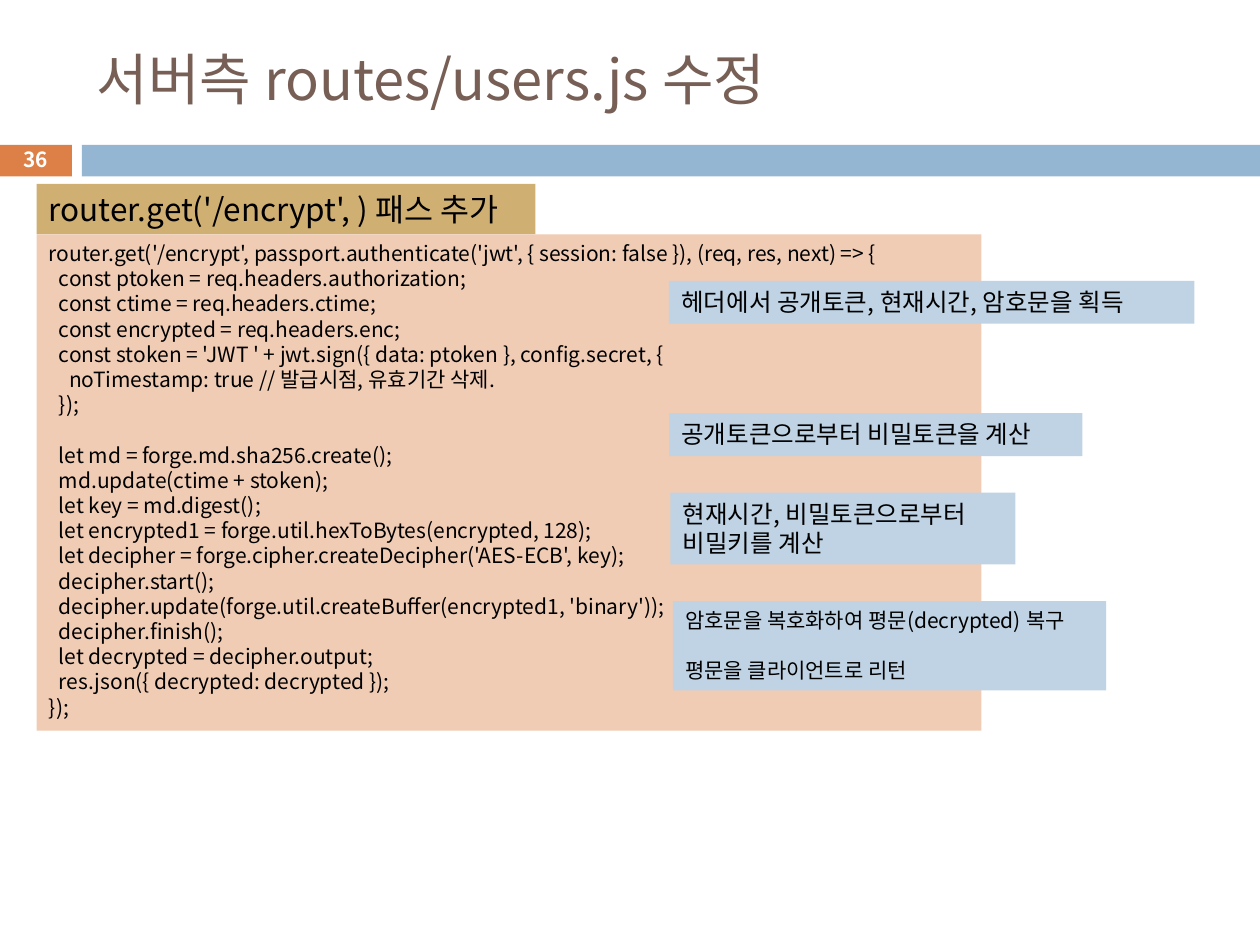
"""Build the slide on the encrypt route in routes/users.js."""
from lxml import etree
from pptx import Presentation
from pptx import util as u
from pptx.dml.color import RGBColor
from pptx.enum import shapes, text
from pptx.oxml.ns import qn

ORANGE = RGBColor(0xDD, 0x80, 0x47)
BLUE = RGBColor(0x94, 0xB6, 0xD2)
PEACH = RGBColor(0xF1, 0xCC, 0xB5)
GOLD = RGBColor(0xD0, 0xAF, 0x72)
PALE = RGBColor(0xBF, 0xD3, 0xE4)
BROWN = RGBColor(0x77, 0x5F, 0x55)
WHITE = RGBColor(0xFF, 0xFF, 0xFF)
BLACK = RGBColor(0, 0, 0)

CODE = """router.get('/encrypt', passport.authenticate('jwt', { session: false }), (req, res, next) => {
  const ptoken = req.headers.authorization;
  const ctime = req.headers.ctime;
  const encrypted = req.headers.enc;
  const stoken = 'JWT ' + jwt.sign({ data: ptoken }, config.secret, {
    noTimestamp: true // 발급시점, 유효기간 삭제.
  });

  let md = forge.md.sha256.create();
  md.update(ctime + stoken);
  let key = md.digest();
  let encrypted1 = forge.util.hexToBytes(encrypted, 128);
  let decipher = forge.cipher.createDecipher('AES-ECB', key);
  decipher.start();
  decipher.update(forge.util.createBuffer(encrypted1, 'binary'));
  decipher.finish();
  let decrypted = decipher.output;
  res.json({ decrypted: decrypted });
});"""

NOTES = [
    ((5.34, 4.77, 3.44, 0.71), 12,
     "암호문을 복호화하여 평문(decrypted) 복구\n\n평문을 클라이언트로 리턴"),
    ((5.31, 2.23, 4.17, 0.34), 14, "헤더에서 공개토큰, 현재시간, 암호문을 획득"),
    ((5.31, 3.28, 3.28, 0.34), 14, "공개토큰으로부터 비밀토큰을 계산"),
    ((5.32, 3.91, 2.74, 0.57), 14, "현재시간, 비밀토큰으로부터\n비밀키를 계산"),
]


class Page:
    """Hold the style and the current slide."""

    font = "Noto Sans CJK KR"
    lead = 1.2
    step = 0.04
    frame = {"word_wrap": True, "auto_size": text.MSO_AUTO_SIZE.NONE}

    def __init__(self, deck):
        self.slide = deck.slides.add_slide(deck.slide_layouts[6])

    def bar(self, box, fill):
        """Add a plain filled block."""
        bar = self.slide.shapes.add_shape(
            shapes.MSO_SHAPE.RECTANGLE, *map(u.Inches, box))
        bar.shadow.inherit = False
        bar.fill.solid()
        bar.fill.fore_color.rgb = fill
        bar.line.fill.background()
        return bar

    def label(self, box, words, size, **form):
        """Add a text box centred on its height."""
        shape = self.slide.shapes.add_textbox(*map(u.Inches, box))
        self.fill_text(shape, words, size, text.MSO_ANCHOR.MIDDLE, **form)

    def panel(self, box, fill, words, size):
        """Add a filled block with text from the top left."""
        self.fill_text(self.bar(box, fill), words, size, text.MSO_ANCHOR.TOP)

    def fill_text(self, shape, words, size, anchor, color=BLACK, bold=False,
                  align=text.PP_ALIGN.LEFT):
        """Set lines of text, with indents and gaps taken from the layout."""
        frame = shape.text_frame
        for name, value in {**self.frame, "vertical_anchor": anchor}.items():
            setattr(frame, name, value)
        pitch = u.Pt(size * self.lead)
        face = {"name": self.font, "size": u.Pt(size), "bold": bold}
        for count, block in enumerate(words.split("\n\n")):
            for row, line in enumerate(block.split("\n")):
                first = count == row == 0
                para = frame.paragraphs[0] if first else frame.add_paragraph()
                gap = pitch if count and not row else 0
                form = {"alignment": align, "line_spacing": pitch,
                        "space_before": gap}
                for name, value in form.items():
                    setattr(para, name, value)
                body = line.lstrip()
                inset = u.Inches(self.step * (len(line) - len(body)))
                if inset:
                    para._p.get_or_add_pPr().set("marL", str(inset))
                run = para.add_run()
                run.text = body
                for name, value in face.items():
                    setattr(run.font, name, value)
                run.font.color.rgb = color
                east = etree.SubElement(run._r.get_or_add_rPr(), qn("a:ea"))
                east.set("typeface", self.font)


def main():
    """Lay out and save the slide."""
    deck = Presentation()
    deck.slide_width, deck.slide_height = u.Inches(10), u.Inches(7.5)
    page = Page(deck)
    page.bar((-0.01, 1.15, 0.58, 0.25), ORANGE)
    page.bar((0.65, 1.15, 9.35, 0.25), BLUE)
    page.panel((0.29, 1.86, 7.5, 3.94), PEACH, CODE, 12)
    page.label((0.67, 0.25, 8.92, 0.74), "서버측 routes/users.js 수정", 32,
               color=BROWN)
    page.label((-0.01, 1.13, 0.58, 0.27), "36", 11.9, color=WHITE, bold=True,
               align=text.PP_ALIGN.CENTER)
    page.panel((0.29, 1.46, 3.96, 0.4), GOLD,
               "router.get('/encrypt', ) 패스 추가", 18)
    for box, size, words in NOTES:
        page.panel(box, PALE, words, size)
    deck.save("out.pptx")


if __name__ == "__main__":
    main()
